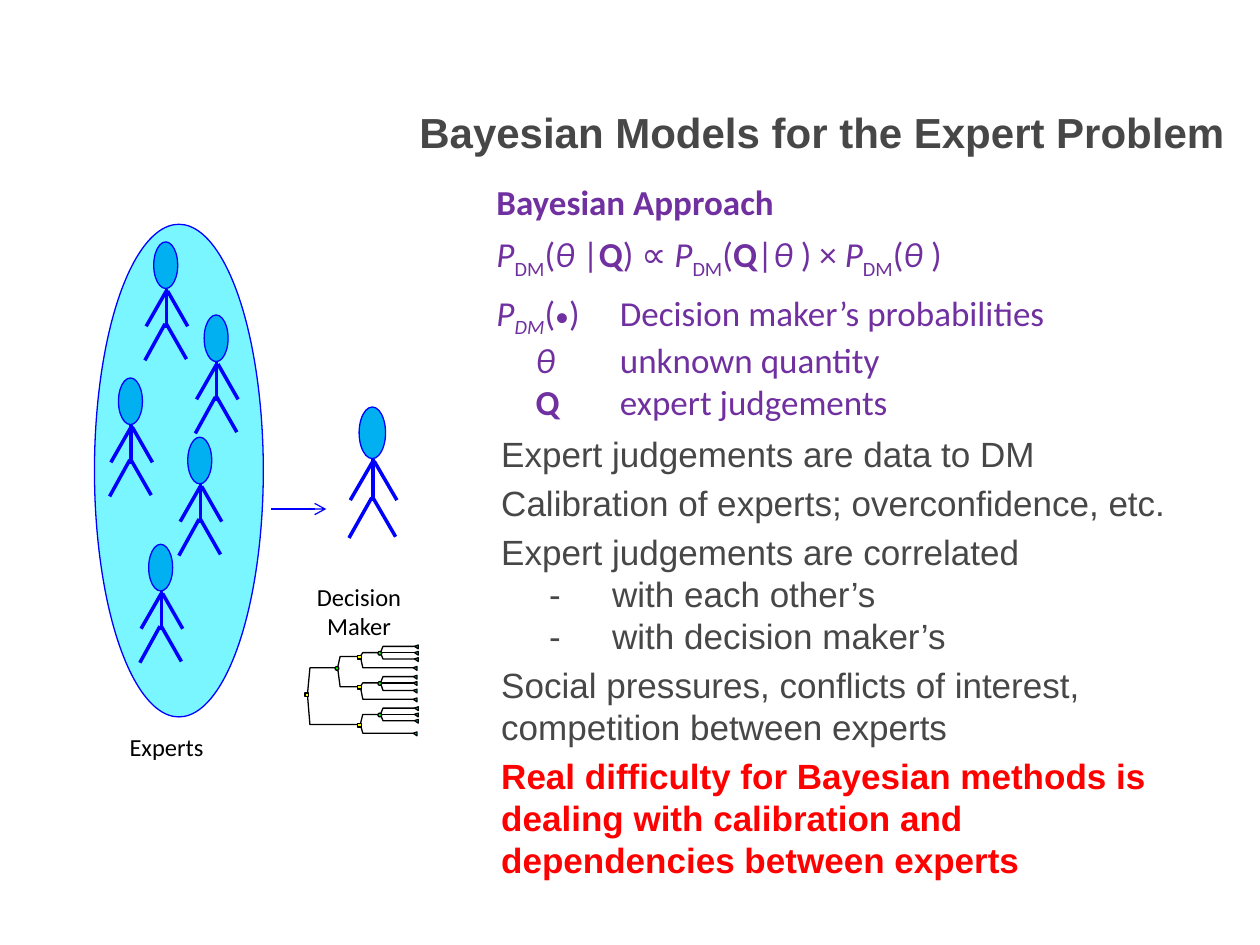
from lxml.etree import SubElement
from pptx import Presentation
from pptx.dml.color import RGBColor
from pptx.enum.shapes import MSO_CONNECTOR, MSO_SHAPE
from pptx.enum.text import MSO_ANCHOR, PP_ALIGN
from pptx.oxml.ns import qn
from pptx.util import Pt

PX = 9144
THEME = {
    "grey": "474747", "purple": "7030A0", "red": "FF0000", "black": "000000",
    "blue": "0000FF", "pool": "79F6FF", "head": "00B0F0",
    "decision": "FFFF00", "chance": "00FF00", "leaf": "00FFFF",
    "heading": "Arial", "label": "Calibri",
    "title_size": 24, "text_size": 20, "dot_size": 16, "label_size": 14,
}


def paint(shape, fill, line, width):
    shape.shadow.inherit = False
    if fill:
        shape.fill.solid()
        shape.fill.fore_color.rgb = RGBColor.from_string(THEME[fill])
    else:
        shape.fill.background()
    shape.line.color.rgb = RGBColor.from_string(THEME[line])
    shape.line.width = Pt(width)


def draw_line(x1, y1, x2, y2, width):
    line = page.shapes.add_connector(
        MSO_CONNECTOR.STRAIGHT, x1 * PX, y1 * PX, x2 * PX, y2 * PX)
    line.line.color.rgb = RGBColor.from_string(THEME["blue"])
    line.line.width = Pt(width)
    SubElement(line._element.spPr, qn("a:effectLst"))
    return line


deck = Presentation()
deck.slide_width, deck.slide_height = 1000 * PX, 750 * PX
page = deck.slides.add_slide(deck.slide_layouts[6])

pool = page.shapes.add_shape(MSO_SHAPE.OVAL, 75 * PX, 178 * PX, 134 * PX, 391 * PX)
paint(pool, "pool", "blue", 0.75)

limbs = [(10, 37, 10, 68), (10, 65, 26, 93), (-7, 94, 9, 65),
         (11, 39, 27, 67), (-6, 67, 10, 39)]
people = [(122, 192, 1), (162, 250, 1), (94, 300, 1), (149, 347, 1),
          (118, 432, 1), (285, 323, 1.11)]
for left, top, scale in people:
    head = page.shapes.add_shape(
        MSO_SHAPE.OVAL, left * PX, top * PX, round(19 * scale) * PX, round(37 * scale) * PX)
    paint(head, "head", "blue", 0.75)
    for limb in limbs:
        x1, y1, x2, y2 = [round(value * scale) for value in limb]
        draw_line(left + x1, top + y1, left + x2, top + y2, 2)

arrow = draw_line(215, 404, 259, 404, 0.75)
SubElement(arrow.line._get_or_add_ln(), qn("a:tailEnd"), type="arrow")

LEAF_X = 328
tree = [
    (302, 518, "chance", [(329, 513), (329, 518), (329, 523)]),
    (302, 542, "chance", [(328, 537), (328, 542), (328, 548)]),
    (302, 567, "chance", [(329, 562), (329, 567), (329, 572)]),
    (286, 521, "decision", [(300, 518), (328, 530)]),
    (286, 545, "decision", [(300, 542), (328, 555)]),
    (286, 575, "decision", [(300, 567), (328, 582)]),
    (268, 530, "chance", [(284, 521), (284, 545)]),
    (244, 551, "decision", [(266, 530), (284, 575)]),
]
for node_x, node_y, kind, ends in tree:
    for end_x, end_y in ends:
        outline = page.shapes.build_freeform(end_x, end_y, scale=PX)
        outline.add_line_segments([(node_x + 2, end_y), (node_x, node_y)], close=False)
        paint(outline.convert_to_shape(), None, "black", 0)
        if end_x >= LEAF_X:
            outline = page.shapes.build_freeform(end_x, end_y, scale=PX)
            outline.add_line_segments([(end_x + 3, end_y - 1), (end_x + 3, end_y + 2)])
            paint(outline.convert_to_shape(), "leaf", "black", 0)
    preset = MSO_SHAPE.OVAL if kind == "chance" else MSO_SHAPE.RECTANGLE
    marker = page.shapes.add_shape(
        preset, (node_x - 2) * PX, (node_y - 1) * PX, 3 * PX, 3 * PX)
    paint(marker, kind, "black", 0)

hanging = {"hang": 38, "before": 4, "leading": 24}
plain = {"before": 4, "leading": 24}
table_row = {"tabs": [31, 98]}
blocks = [
    ((323, 42, 666, 125), (10, 5), "heading", "title_size", "grey", [
        ([("Bayesian Models for the Expert Problem", "b")], {"anchor": MSO_ANCHOR.MIDDLE}),
    ]),
    ((388, 338, 566, 377), (10, 5), "heading", "text_size", "grey", [
        ([("Expert judgements are data to DM", "")], {"hang": 38, "leading": 24}),
        ([("Calibration of experts; overconfidence, etc.", "")], hanging),
        ([("Expert judgements are correlated", ""), ("\v", ""),
          ("-\twith each other’s", ""), ("\v", ""),
          ("-\twith decision maker’s", "")], {**hanging, "tabs": [69]}),
        ([("Social pressures, conflicts of interest, competition between experts", "")], plain),
        ([("Real difficulty for Bayesian methods is dealing with calibration and "
           "dependencies between experts", "br")], plain),
    ]),
    ((390, 139, 555, 240), (4, 4), "label", "text_size", "purple", [
        ([("Bayesian Approach", "b")], {"after": 6}),
        ([("P", "i"), ("DM", "s"), ("(", ""), ("θ ", "i"), ("|", ""), ("Q", "b"),
          (") ∝ ", ""), ("P", "i"), ("DM", "s"), ("(", ""), ("Q", "b"), ("|", ""),
          ("θ ", "i"), (") × ", ""), ("P", "i"), ("DM", "s"), ("(", ""),
          ("θ ", "i"), (")", "")], {"after": 6}),
        ([("P", "i"), ("DM", "is"), ("(", ""), ("•", "d"),
          (")\tDecision maker’s probabilities", "")], {"tabs": [98]}),
        ([("\tθ\t", "i"), ("unknown quantity", "")], table_row),
        ([("\tQ\t", "b"), ("expert judgements", "")], table_row),
    ]),
    ((93, 576, 90, 34), (10, 5), "label", "label_size", "black", [
        ([("Experts", "")], {}),
    ]),
    ((232, 457, 106, 57), (10, 5), "label", "label_size", "black", [
        ([("Decision Maker", "")], {"align": PP_ALIGN.CENTER}),
    ]),
]
for bounds, (side, edge), font, size, colour, paragraphs in blocks:
    box = page.shapes.add_textbox(*[value * PX for value in bounds])
    frame = box.text_frame
    frame.word_wrap = True
    frame.margin_left = frame.margin_right = side * PX
    frame.margin_top = frame.margin_bottom = edge * PX
    for index, (spans, layout) in enumerate(paragraphs):
        para = frame.add_paragraph() if index else frame.paragraphs[0]
        properties = para._p.get_or_add_pPr()
        if "tabs" in layout:
            stops = SubElement(properties, qn("a:tabLst"))
            for stop in layout["tabs"]:
                SubElement(stops, qn("a:tab"), pos=str(stop * PX), algn="l")
        if "hang" in layout:
            properties.set("marL", str(layout["hang"] * PX))
            properties.set("indent", str(-layout["hang"] * PX))
        if "leading" in layout:
            para.line_spacing = Pt(layout["leading"])
        if "anchor" in layout:
            frame.vertical_anchor = layout["anchor"]
        para.space_before = Pt(layout.get("before", 0))
        para.space_after = Pt(layout.get("after", 0))
        para.alignment = layout.get("align", PP_ALIGN.LEFT)
        for text, marks in spans:
            if text == "\v":
                para.add_line_break()
                continue
            span = para.add_run()
            span.text = text
            span.font.name = THEME[font]
            span.font.size = Pt(THEME["dot_size" if "d" in marks else size])
            span.font.bold = "b" in marks
            span.font.italic = "i" in marks
            span.font.color.rgb = RGBColor.from_string(THEME["red" if "r" in marks else colour])
            if "s" in marks:
                span.font._element.set("baseline", "-25000")

deck.save("out.pptx")
